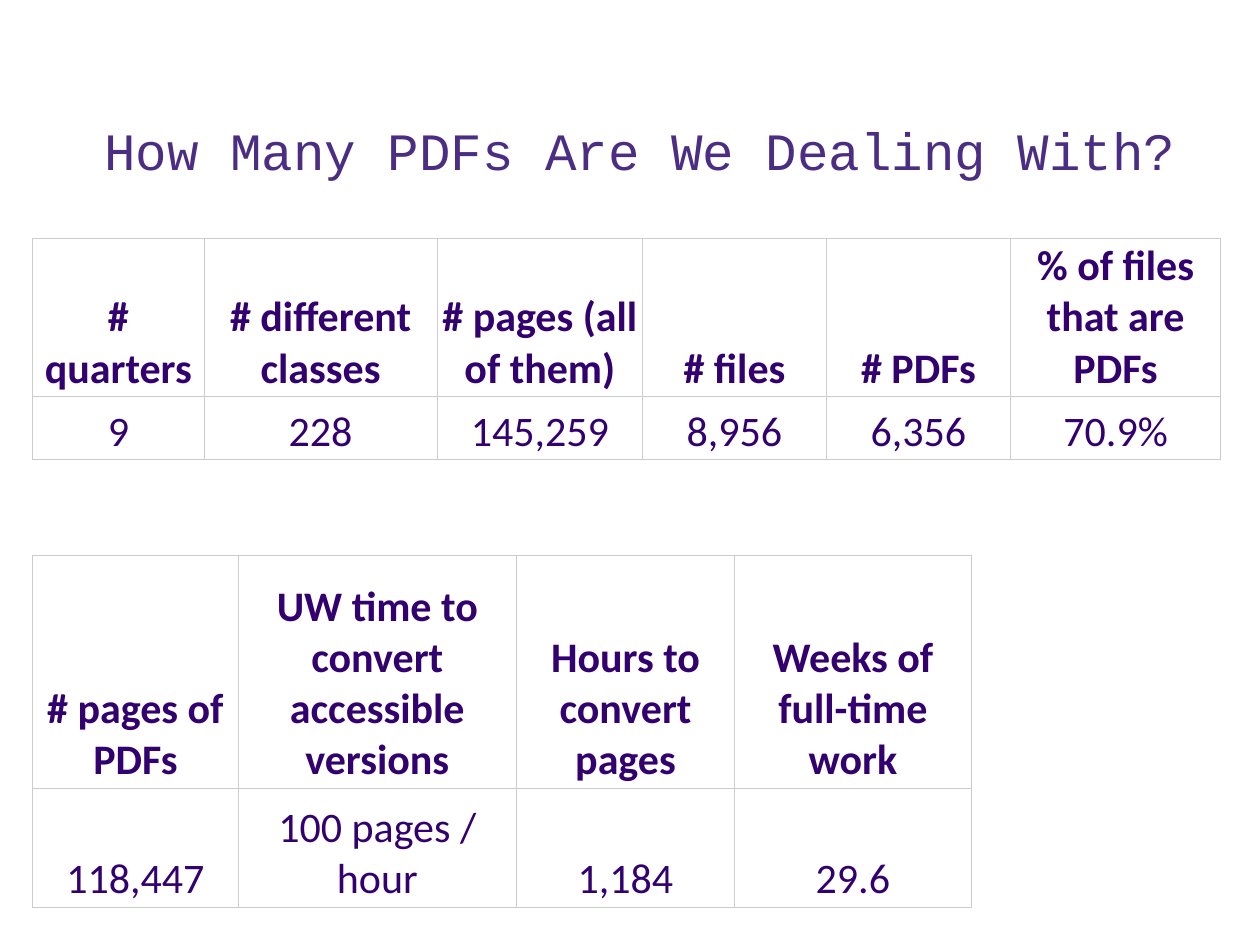
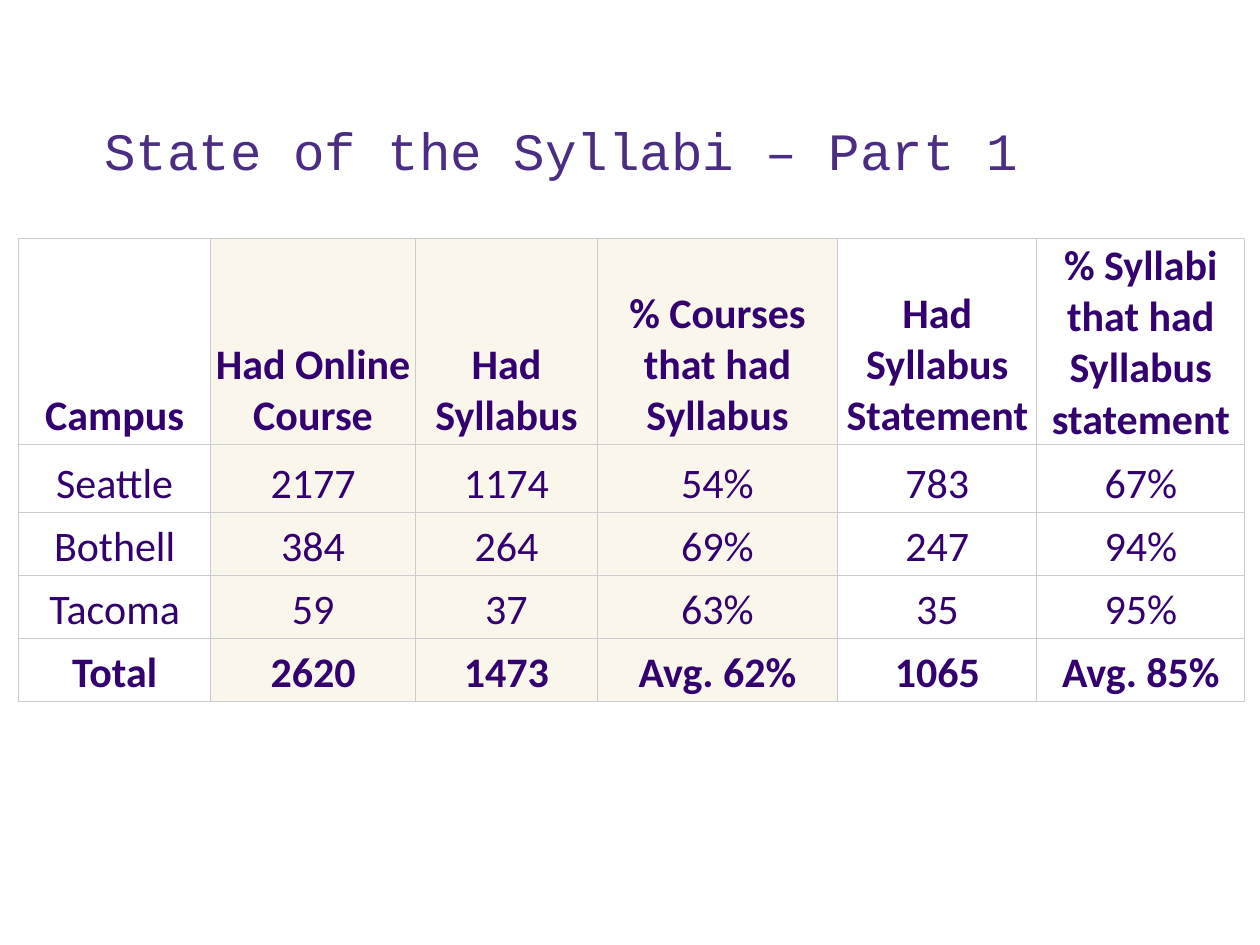
from dataclasses import dataclass

import lxml.etree
import pptx
import pptx.dml.color
import pptx.enum.text
import pptx.oxml.ns
import pptx.util

Inches = pptx.util.Inches
Pt = pptx.util.Pt


@dataclass(frozen=True)
class Theme:
    title_font: str = "Courier New"
    title_size: int = 30
    title_color: str = "4B2E83"
    table_font: str = "Calibri"
    table_size: int = 24
    table_color: str = "33006F"
    highlight: str = "FAF6EC"
    border: str = "CCCCCC"
    border_width: float = 0.6


THEME = Theme()


def rgb(color):
    return pptx.dml.color.RGBColor.from_string(color)


def set_font(p, name, size, color, bold=False):
    for r in p.runs:
        r.font.name = name
        r.font.size = Pt(size)
        r.font.color.rgb = rgb(color)
        r.font.bold = bold


def add_title(s, text):
    sp = s.shapes.add_textbox(Inches(0.73), Inches(0.41), Inches(8.95), Inches(1.08))
    tf = sp.text_frame
    tf.word_wrap = True
    tf.vertical_anchor = pptx.enum.text.MSO_ANCHOR.BOTTOM
    p = tf.paragraphs[0]
    p.text = text
    p.line_spacing = 0.9
    set_font(p, THEME.title_font, THEME.title_size, THEME.title_color)


def set_borders(cell):
    qn = pptx.oxml.ns.qn
    tc_pr = cell._tc.get_or_add_tcPr()
    for side in ("a:lnL", "a:lnR", "a:lnT", "a:lnB"):
        ln = lxml.etree.SubElement(tc_pr, qn(side), w=str(Pt(THEME.border_width)))
        fill = lxml.etree.SubElement(ln, qn("a:solidFill"))
        lxml.etree.SubElement(fill, qn("a:srgbClr"), val=THEME.border)


def style_cell(cell, text, bold, highlighted, side_margin):
    set_borders(cell)
    if highlighted:
        cell.fill.solid()
        cell.fill.fore_color.rgb = rgb(THEME.highlight)
    else:
        cell.fill.background()
    cell.margin_left = cell.margin_right = Inches(side_margin)
    cell.margin_top = cell.margin_bottom = Inches(0.02)
    cell.vertical_anchor = pptx.enum.text.MSO_ANCHOR.BOTTOM
    p = cell.text_frame.paragraphs[0]
    p.text = text
    p.alignment = pptx.enum.text.PP_ALIGN.CENTER
    set_font(p, THEME.table_font, THEME.table_size, THEME.table_color, bold)


def add_data_table(s, left, top, widths, heights, rows, bold_rows=(0,), highlight_cols=()):
    frame = s.shapes.add_table(
        len(rows), len(widths), Inches(left), Inches(top),
        Inches(sum(widths)), Inches(sum(heights)))
    table = frame.table
    table.first_row = False
    table.horz_banding = False
    for column, width in zip(table.columns, widths):
        column.width = Inches(width)
    for i, (height, values) in enumerate(zip(heights, rows)):
        table.rows[i].height = Inches(height)
        for j, value in enumerate(values):
            style_cell(table.cell(i, j), value, i in bold_rows,
                       j in highlight_cols, 0.03 if i else 0.02)


def add_pdf_slide(prs):
    s = prs.slides.add_slide(prs.slide_layouts[6])
    add_data_table(
        s, 0.26, 4.41, [1.63, 2.21, 1.73, 1.88], [1.85, 0.94],
        [["# pages of PDFs", "UW time to convert accessible versions",
          "Hours to convert pages", "Weeks of full-time work"],
         ["118,447", "100 pages / hour", "1,184", "29.6"]])
    add_data_table(
        s, 0.26, 1.89, [1.36, 1.85, 1.63, 1.46, 1.46, 1.67], [1.21, 0.5],
        [["# quarters", "# different classes", "# pages (all of them)",
          "# files", "# PDFs", "% of files that are PDFs"],
         ["9", "228", "145,259", "8,956", "6,356", "70.9%"]])
    add_title(s, "How Many PDFs Are We Dealing With?")


def add_syllabi_slide(prs):
    s = prs.slides.add_slide(prs.slide_layouts[6])
    add_data_table(
        s, 0.15, 1.89, [1.52, 1.63, 1.44, 1.91, 1.58, 1.65],
        [1.21, 0.54, 0.5, 0.5, 0.5],
        [["Campus", "Had Online Course", "Had Syllabus", "% Courses that had Syllabus",
          "Had Syllabus Statement", "% Syllabi that had Syllabus statement"],
         ["Seattle", "2177", "1174", "54%", "783", "67%"],
         ["Bothell", "384", "264", "69%", "247", "94%"],
         ["Tacoma", "59", "37", "63%", "35", "95%"],
         ["Total", "2620", "1473", "Avg. 62%", "1065", "Avg. 85%"]],
        bold_rows=(0, 4), highlight_cols=(1, 2, 3))
    add_title(s, "State of the Syllabi – Part 1")


def main():
    prs = pptx.Presentation()
    prs.slide_width = Inches(10)
    prs.slide_height = Inches(7.5)
    add_pdf_slide(prs)
    add_syllabi_slide(prs)
    prs.save("out.pptx")


if __name__ == "__main__":
    main()
